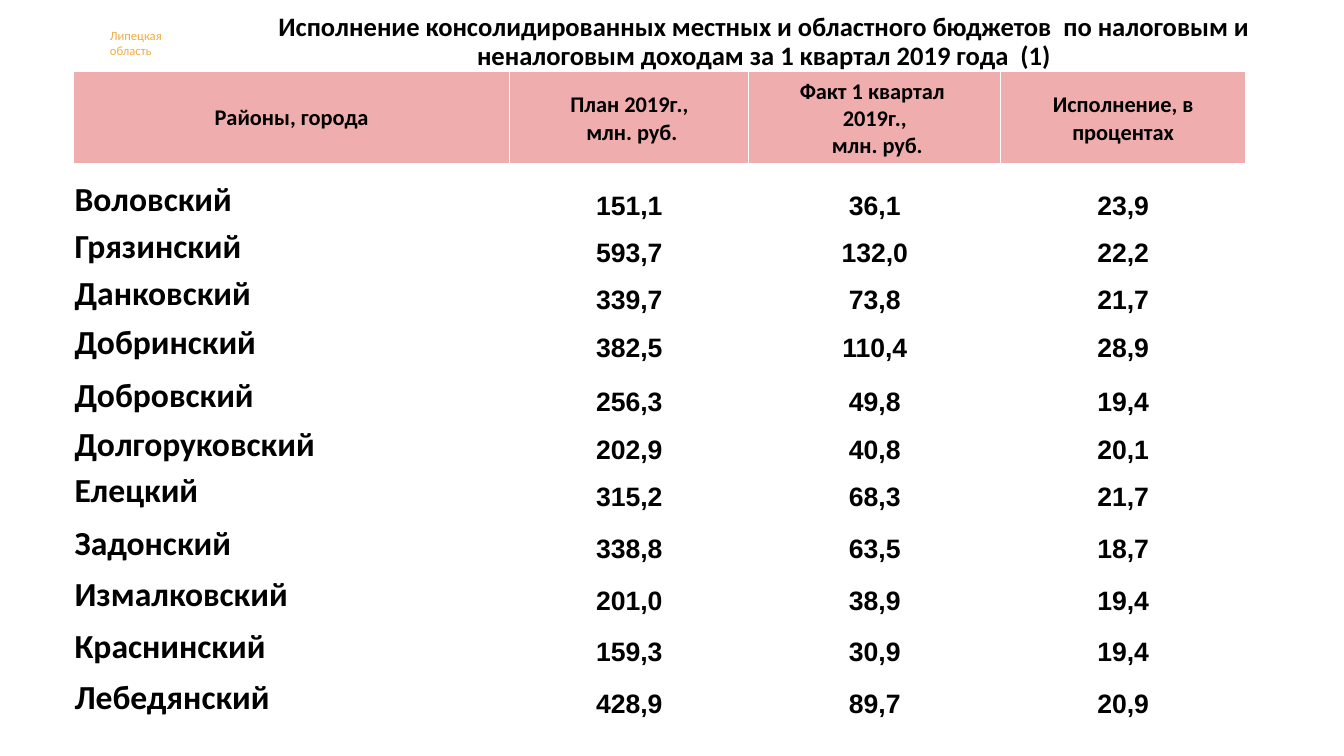
"""Build the slide with district budget revenue for the first quarter of 2019."""
from lxml import etree
from pptx import Presentation
from pptx.dml.color import RGBColor
from pptx.enum.text import MSO_ANCHOR, PP_ALIGN
from pptx.oxml.ns import qn
from pptx.util import Cm, Pt

LEFT, CENTER = PP_ALIGN.LEFT, PP_ALIGN.CENTER
TOP, MIDDLE, BOTTOM = MSO_ANCHOR.TOP, MSO_ANCHOR.MIDDLE, MSO_ANCHOR.BOTTOM
BLACK, WHITE, PINK, AMBER = "000000", "FFFFFF", "F0ADAD", "F2AC44"


def color(value):
    return RGBColor.from_string(value)


def write(frame, text, size, font="Calibri", ink=BLACK, bold=True, align=CENTER, spacing=None):
    for index, line in enumerate(text.split("\n")):
        para = frame.paragraphs[0] if index == 0 else frame.add_paragraph()
        para.alignment = align
        para.line_spacing = spacing
        span = para.add_run()
        span.text = line
        span.font.size = Pt(size)
        span.font.name = font
        span.font.bold = bold
        span.font.color.rgb = color(ink)


deck = Presentation()
deck.slide_width, deck.slide_height = Cm(33.87), Cm(19.05)
page = deck.slides.add_slide(deck.slide_layouts[6])

title = "Исполнение консолидированных местных и областного бюджетов  по налоговым и неналоговым доходам за 1 квартал 2019 года  (1)"
captions = [
    ((2.59, 0.61, 2.31, 0.99), TOP, "Липецкая\nобласть",
     dict(size=9, ink=AMBER, bold=False, align=LEFT)),
    ((5.33, 0.33, 27.84, 1.47), MIDDLE, title, dict(size=19, spacing=0.9)),
]
for place, anchor, text, style in captions:
    box = page.shapes.add_textbox(*[Cm(length) for length in place])
    frame = box.text_frame
    frame.word_wrap = True
    frame.vertical_anchor = anchor
    frame.margin_left = frame.margin_right = Cm(0.18)
    frame.margin_top = frame.margin_bottom = Cm(0.1)
    write(frame, text, **style)

rows = [
    ("Районы, города", "План 2019г.,\n млн. руб.",
     "Факт 1 квартал \n2019г.,\n млн. руб.", "Исполнение, в процентах"),
    ("Воловский", "151,1", "36,1", "23,9"),
    ("Грязинский", "593,7", "132,0", "22,2"),
    ("Данковский", "339,7", "73,8", "21,7"),
    ("Добринский", "382,5", "110,4", "28,9"),
    ("Добровский", "256,3", "49,8", "19,4"),
    ("Долгоруковский", "202,9", "40,8", "20,1"),
    ("Елецкий", "315,2", "68,3", "21,7"),
    ("Задонский", "338,8", "63,5", "18,7"),
    ("Измалковский", "201,0", "38,9", "19,4"),
    ("Краснинский", "159,3", "30,9", "19,4"),
    ("Лебедянский", "428,9", "89,7", "20,9"),
]
widths = [11, 6.02, 6.35, 6.17]
heights = [2.36, 1.4, 1.19, 1.19, 1.22, 1.35, 1.22, 1.17, 1.32, 1.3, 1.3, 1.3]
table = page.shapes.add_table(len(rows), len(widths), Cm(1.85), Cm(1.8),
                              Cm(sum(widths)), Cm(sum(heights))).table
table.horz_banding = False
table.first_row = False
for column, width in zip(table.columns, widths):
    column.width = Cm(width)
for row, height in zip(table.rows, heights):
    row.height = Cm(height)

for row_index, row in enumerate(rows):
    header = row_index == 0
    for column_index, text in enumerate(row):
        cell = table.cell(row_index, column_index)
        cell.vertical_anchor = MIDDLE if header else BOTTOM
        roomy = header and column_index == 0
        cell.margin_left = cell.margin_right = Cm(0.25 if roomy else 0.03)
        cell.margin_top = Cm(0.13 if roomy else 0.03)
        cell.margin_bottom = Cm(0.13 if roomy else 0)

        properties = cell._tc.get_or_add_tcPr()
        for side in ("lnL", "lnR", "lnT", "lnB"):
            thick = (header and side == "lnB") or (row_index == 1 and side == "lnT")
            border = etree.SubElement(properties, qn(f"a:{side}"), w=str(Pt(3 if thick else 1)))
            paint = etree.SubElement(border, qn("a:solidFill"))
            etree.SubElement(paint, qn("a:srgbClr"), val=WHITE)

        if header:
            cell.fill.solid()
            cell.fill.fore_color.rgb = color(PINK)
            write(cell.text_frame, text, 16)
        else:
            cell.fill.background()
            if column_index == 0:
                write(cell.text_frame, text, 24, align=LEFT)
            else:
                write(cell.text_frame, text, 19, font="Arial")

deck.save("out.pptx")
